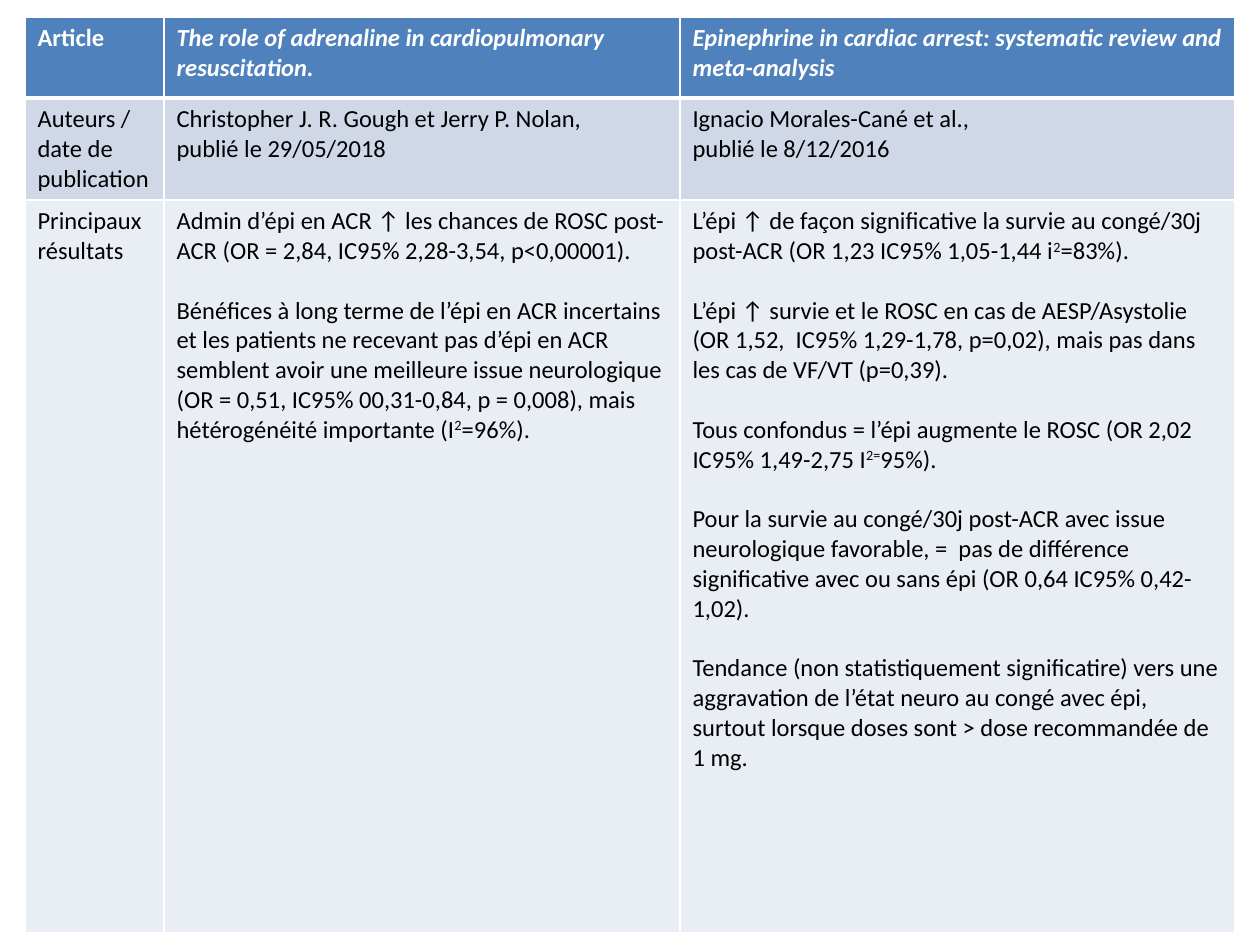
import pptx
import pptx.dml.color
import pptx.oxml.ns
import pptx.util
from lxml import etree

SCALE = 914400 / 126
FONT = "Calibri"
TEXT_SIZE = 14
PARAGRAPH_GAP = 17
COLORS = {
    "header": "4F81BD",
    "authors": "D0D8E8",
    "results": "E9EDF4",
    "border": "FFFFFF",
    "header_text": "FFFFFF",
    "body_text": "000000",
}
COLUMN_WIDTHS = [139, 516, 555]
ROW_HEIGHTS = [81, 98, 733]
ROW_NAMES = ["header", "authors", "results"]
SUPERSCRIPT_MARK = "^"

CONTENT = [
    [
        ["Article"],
        ["The role of adrenaline in cardiopulmonary resuscitation."],
        ["Epinephrine in cardiac arrest: systematic review and meta-analysis"],
    ],
    [
        ["Auteurs / date de publication"],
        ["Christopher J. R. Gough et Jerry P. Nolan,", "publié le 29/05/2018"],
        ["Ignacio Morales-Cané et al.,", "publié le 8/12/2016"],
    ],
    [
        ["Principaux résultats"],
        [
            "Admin d’épi en ACR ↑ les chances de ROSC post-ACR "
            "(OR = 2,84, IC95% 2,28-3,54, p<0,00001).",
            "Bénéfices à long terme de l’épi en ACR incertains et les patients "
            "ne recevant pas d’épi en ACR semblent avoir une meilleure issue "
            "neurologique (OR = 0,51, IC95% 00,31-0,84, p = 0,008), mais "
            "hétérogénéité importante (I^2^=96%).",
        ],
        [
            "L’épi ↑ de façon significative la survie au congé/30j post-ACR "
            "(OR 1,23 IC95% 1,05-1,44 i^2^=83%).",
            "L’épi ↑ survie et le ROSC en cas de AESP/Asystolie (OR 1,52,  "
            "IC95% 1,29-1,78, p=0,02), mais pas dans les cas de VF/VT (p=0,39).",
            "Tous confondus = l’épi augmente le ROSC "
            "(OR 2,02 IC95% 1,49-2,75 I^2=^95%).",
            "Pour la survie au congé/30j post-ACR avec issue neurologique "
            "favorable, =  pas de différence significative avec ou sans épi "
            "(OR 0,64 IC95% 0,42-1,02).",
            "Tendance (non statistiquement significatire) vers une aggravation "
            "de l’état neuro au congé avec épi, surtout lorsque doses sont > "
            "dose recommandée de 1 mg.",
        ],
    ],
]


def px(value):
    return pptx.util.Emu(round(value * SCALE))


def color(name):
    return pptx.dml.color.RGBColor.from_string(COLORS[name])


def add_border(cell, side, points):
    qn = pptx.oxml.ns.qn
    properties = cell._tc.get_or_add_tcPr()
    line = etree.SubElement(properties, qn(f"a:ln{side}"), w=str(pptx.util.Pt(points)))
    fill = etree.SubElement(line, qn("a:solidFill"))
    etree.SubElement(fill, qn("a:srgbClr"), val=COLORS["border"])


def add_run(paragraph, text, color_name, bold, italic, superscript):
    run = paragraph.add_run()
    run.text = text
    run.font.name = FONT
    run.font.size = pptx.util.Pt(TEXT_SIZE)
    run.font.bold = bold
    run.font.italic = italic
    run.font.color.rgb = color(color_name)
    if superscript:
        run._r.get_or_add_rPr().set("baseline", "30000")


def fill_cell(cell, paragraphs, row_name, is_label):
    is_header = row_name == "header"
    for side in "LRTB":
        add_border(cell, side, 3 if is_header and side == "B" else 1)
    cell.fill.solid()
    cell.fill.fore_color.rgb = color(row_name)
    text_color = "header_text" if is_header else "body_text"
    for index, text in enumerate(paragraphs):
        frame = cell.text_frame
        paragraph = frame.add_paragraph() if index else frame.paragraphs[0]
        if index and row_name == "results":
            paragraph.space_before = pptx.util.Pt(PARAGRAPH_GAP)
        for part, piece in enumerate(text.split(SUPERSCRIPT_MARK)):
            add_run(paragraph, piece, text_color, is_header,
                    is_header and not is_label, part % 2 == 1)


def add_article_table(slide):
    shape = slide.shapes.add_table(
        len(ROW_HEIGHTS), len(COLUMN_WIDTHS), px(25), px(17),
        px(sum(COLUMN_WIDTHS)), px(sum(ROW_HEIGHTS)))
    table = shape.table
    for column, width in zip(table.columns, COLUMN_WIDTHS):
        column.width = px(width)
    for row, height, name, texts in zip(table.rows, ROW_HEIGHTS, ROW_NAMES, CONTENT):
        row.height = px(height)
        for index, (cell, paragraphs) in enumerate(zip(row.cells, texts)):
            fill_cell(cell, paragraphs, name, index == 0)


def main():
    presentation = pptx.Presentation()
    presentation.slide_width = px(1260)
    presentation.slide_height = px(945)
    slide = presentation.slides.add_slide(presentation.slide_layouts[6])
    add_article_table(slide)
    presentation.save("out.pptx")


if __name__ == "__main__":
    main()
